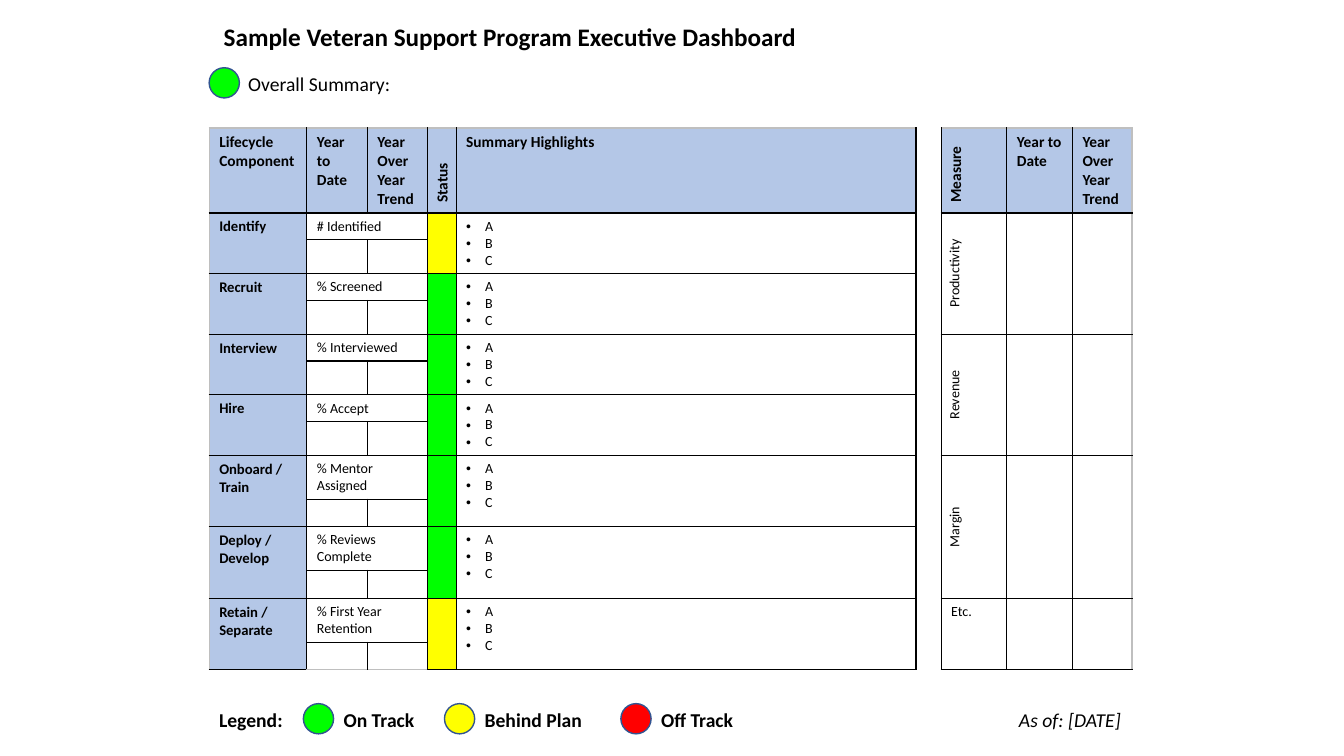
from lxml.etree import SubElement
from pptx import Presentation
from pptx.dml.color import RGBColor
from pptx.enum.shapes import MSO_SHAPE
from pptx.enum.text import MSO_ANCHOR, MSO_AUTO_SIZE, PP_ALIGN
from pptx.oxml import parse_xml
from pptx.oxml.ns import nsdecls, qn
from pptx.util import Pt

FONT = "Calibri"
BLACK, WHITE, BLUE, EDGE = "000000", "FFFFFF", "B4C7E7", "BFBFBF"
GREEN, YELLOW, RED, OUTLINE = "00FF00", "FFFF00", "FF0000", "325491"
COLUMNS = [69.8, 43.2, 43.2, 20.2, 328.5, 18, 46.9, 46.9, 42.5]
HEADERS = ["Lifecycle Component", "Year to Date", "Year Over Year Trend", "Status",
           "Summary Highlights", "", "Measure", "Year to Date", "Year Over Year Trend"]
STATUS, HIGHLIGHTS, GAP, MEASURE = 3, 4, 5, 6
HEADER_HEIGHT = 60.7
STAGES = [
    ("Identify", "# Identified", YELLOW, 19.3, 23.9),
    ("Recruit", "% Screened", GREEN, 19.3, 23.9),
    ("Interview", "% Interviewed", GREEN, 19.3, 23.9),
    ("Hire", "% Accept", GREEN, 19.3, 23.9),
    ("Onboard / Train", "% Mentor Assigned", GREEN, 31.4, 19.3),
    ("Deploy / Develop", "% Reviews Complete", GREEN, 31.4, 20.1),
    ("Retain / Separate", "% First Year Retention", YELLOW, 31.4, 18.6),
]
MEASURES = [("Productivity", 4), ("Revenue", 4), ("Margin", 4), ("Etc.", 2)]
LEGEND = [("On Track", GREEN, 216.7), ("Behind Plan", YELLOW, 317.5), ("Off Track", RED, 443.5)]
DOT = 21.6


def color(value):
    """Turn a hex string into a colour."""
    return RGBColor.from_string(value)


def write(frame, *lines, size=14, bold=False, italic=False, align=PP_ALIGN.LEFT, bullet=False):
    """Fill a text frame with one paragraph for each line."""
    for index, line in enumerate(lines):
        para = frame.add_paragraph() if index else frame.paragraphs[0]
        para.alignment = align
        span = para.add_run()
        span.text = line
        span.font.name, span.font.size = FONT, Pt(size)
        span.font.bold, span.font.italic = bold, italic
        span.font.color.rgb = color(BLACK)
        if bullet:
            properties = para._p.get_or_add_pPr()
            properties.set("marL", str(Pt(13.5)))
            properties.set("indent", str(-Pt(13.5)))
            SubElement(properties, qn("a:buFont")).set("typeface", "Arial")
            SubElement(properties, qn("a:buChar")).set("char", "•")


def add_label(shapes, line, left, top, width, height=24.2, **style):
    """Add a text box with one line."""
    box = shapes.add_textbox(Pt(left), Pt(top), Pt(width), Pt(height))
    box.text_frame.word_wrap = True
    box.text_frame.auto_size = MSO_AUTO_SIZE.SHAPE_TO_FIT_TEXT
    write(box.text_frame, line, **style)


def add_dot(shapes, fill, left, top):
    """Add a round status light."""
    dot = shapes.add_shape(MSO_SHAPE.OVAL, Pt(left), Pt(top), Pt(DOT), Pt(DOT))
    dot.shadow.inherit = False
    dot.fill.solid()
    dot.fill.fore_color.rgb = color(fill)
    dot.line.color.rgb = color(OUTLINE)
    dot.line.width = Pt(1)


def add_title(page, line):
    """Place and format the title placeholder."""
    title = page.shapes.title
    title.left, title.top, title.width, title.height = Pt(152.6), Pt(11.5), Pt(513.4), Pt(29)
    title.text_frame.word_wrap = True
    title.text_frame.auto_size = MSO_AUTO_SIZE.SHAPE_TO_FIT_TEXT
    title.text_frame.vertical_anchor = MSO_ANCHOR.TOP
    write(title.text_frame, line, size=18, bold=True)


def paint(cell, fill):
    """Fill a table cell."""
    cell.fill.solid()
    cell.fill.fore_color.rgb = color(fill)


def turn(cell):
    """Make the text of a cell read upwards."""
    cell._tc.get_or_add_tcPr().set("vert", "vert270")
    cell.vertical_anchor = MSO_ANCHOR.MIDDLE


def set_borders(cell, edges):
    """Draw the borders of a cell from a mapping of side to colour or None."""
    properties = cell._tc.get_or_add_tcPr()
    for index, (side, value) in enumerate(edges.items()):
        paint_xml = (f'<a:solidFill><a:srgbClr val="{value}"/></a:solidFill>'
                     if value else "<a:noFill/>")
        properties.insert(index, parse_xml(
            f'<a:ln{side} {nsdecls("a")} w="{Pt(1)}">{paint_xml}</a:ln{side}>'))


def format_grid(table):
    """Give every cell its base fill, empty text size and borders."""
    last_row, last_column = len(table.rows) - 1, len(table.columns) - 1
    for row in range(last_row + 1):
        for column in range(last_column + 1):
            cell = table.cell(row, column)
            paint(cell, BLUE if column != GAP and (row == 0 or column == 0) else WHITE)
            SubElement(cell.text_frame.paragraphs[0]._p, qn("a:endParaRPr")).set("sz", "1000")
            gap = column == GAP
            set_borders(cell, {
                "L": EDGE if column == 0 else BLACK,
                "R": EDGE if column == last_column else BLACK,
                "T": None if gap else EDGE if row == 0 else BLACK,
                "B": None if gap else EDGE if row == last_row else BLACK,
            })


def fill_stage(table, row, name, metric, status):
    """Fill the two rows of a lifecycle stage."""
    for column in (0, STATUS, HIGHLIGHTS, GAP):
        table.cell(row, column).merge(table.cell(row + 1, column))
    table.cell(row, 1).merge(table.cell(row, 2))
    write(table.cell(row, 0).text_frame, name, size=10.5, bold=True)
    write(table.cell(row, 1).text_frame, metric, size=10)
    write(table.cell(row, HIGHLIGHTS).text_frame, "A", "B", "C", size=10, bullet=True)
    for part in (row, row + 1):
        paint(table.cell(part, STATUS), status)


def fill_measure(table, row, name, count):
    """Fill a measure that covers several rows."""
    for column in range(MEASURE, len(COLUMNS)):
        table.cell(row, column).merge(table.cell(row + count - 1, column))
    cell = table.cell(row, MEASURE)
    upright = count == 2
    if not upright:
        turn(cell)
    write(cell.text_frame, name, size=10, align=PP_ALIGN.LEFT if upright else PP_ALIGN.CENTER)


def add_dashboard(page):
    """Add the table of stages and measures."""
    heights = [HEADER_HEIGHT] + [height for stage in STAGES for height in stage[3:]]
    table = page.shapes.add_table(len(heights), len(COLUMNS), Pt(149.4), Pt(91.4),
                                  Pt(sum(COLUMNS)), Pt(sum(heights))).table
    table.first_row = table.horz_banding = False
    for column, width in zip(table.columns, COLUMNS):
        column.width = Pt(width)
    for row, height in zip(table.rows, heights):
        row.height = Pt(height)
    format_grid(table)
    for column, header in enumerate(HEADERS):
        if header:
            write(table.cell(0, column).text_frame, header, size=11, bold=True)
    for column in (STATUS, MEASURE):
        turn(table.cell(0, column))
    for index, (name, metric, status, *_) in enumerate(STAGES):
        fill_stage(table, 1 + 2 * index, name, metric, status)
    row = 1
    for name, count in MEASURES:
        fill_measure(table, row, name, count)
        row += count


def add_legend(page):
    """Add the grouped legend of status lights."""
    shapes = page.shapes.add_group_shape().shapes
    add_label(shapes, "Legend:", 149.4, 501.8, 103.7, bold=True)
    for name, fill, left in LEGEND:
        add_dot(shapes, fill, left, 502.6)
        add_label(shapes, name, left + DOT, 501.8, 103.7, bold=True)


def main():
    """Build and save the dashboard."""
    deck = Presentation()
    deck.slide_width, deck.slide_height = Pt(960), Pt(540)
    page = deck.slides.add_slide(deck.slide_layouts[5])
    add_title(page, "Sample Veteran Support Program Executive Dashboard")
    add_dashboard(page)
    add_label(page.shapes, "Overall Summary:", 170.2, 47.8, 610.6)
    add_dot(page.shapes, GREEN, 149.4, 48.4)
    add_legend(page)
    add_label(page.shapes, "As of: [DATE]", 633.6, 501.8, 174.2, italic=True,
              align=PP_ALIGN.RIGHT)
    deck.save("out.pptx")


if __name__ == "__main__":
    main()
